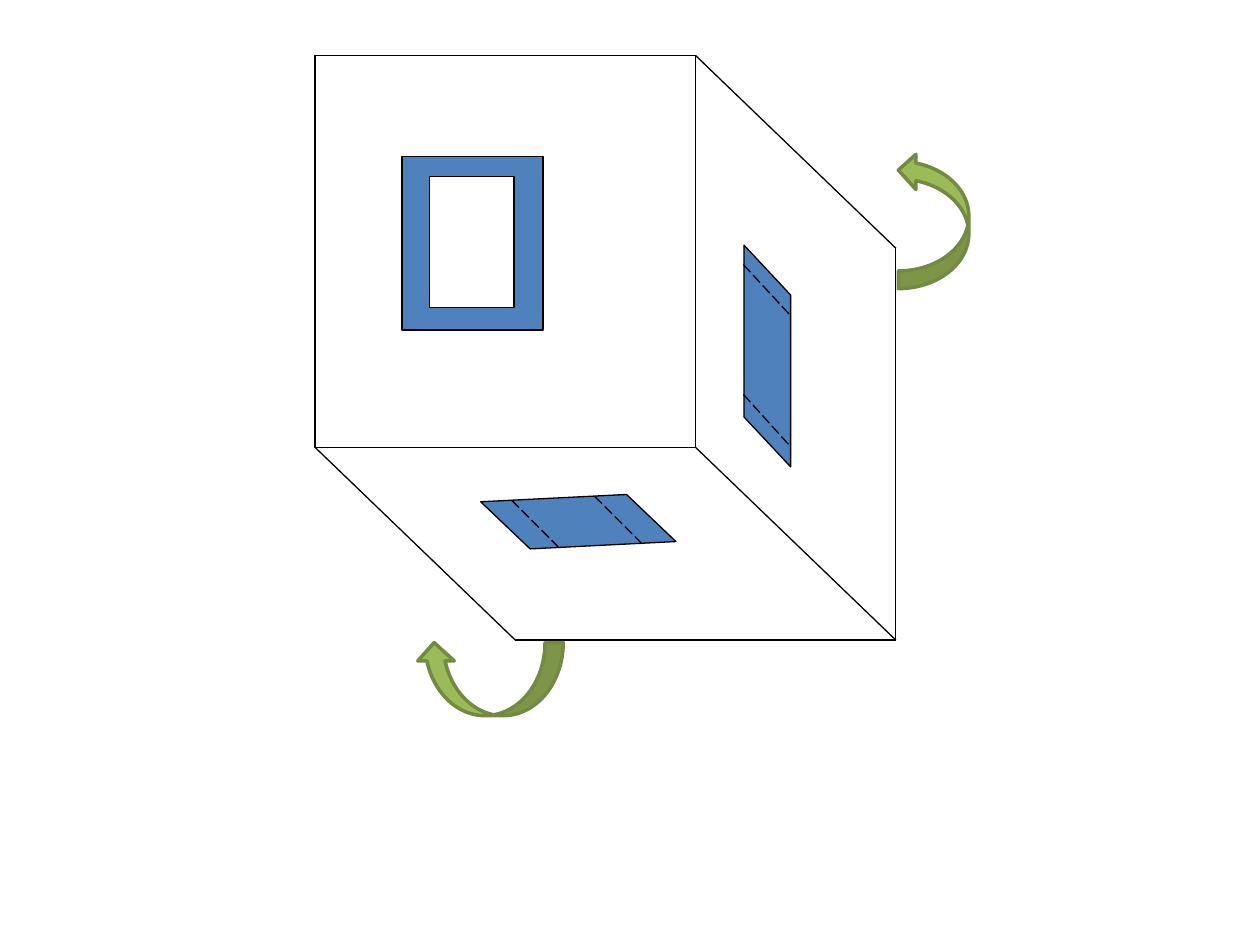
from pptx import Presentation, util as u
from pptx.dml.color import RGBColor
from pptx.enum import dml, shapes
from pptx.oxml.ns import qn
from lxml import etree

HUES = {"ink": "000000", "blue": "4F81BD", "white": "FFFFFF",
        "green": "9BBB59", "edge": "738A42"}
COLS, ROWS = 100, 75
KIND = shapes.MSO_SHAPE


class Board:
    """Holds the style and the slide; lengths are grid columns and rows."""

    def __init__(self, deck):
        self.slide = deck.slides.add_slide(deck.slide_layouts[6])
        self.col = deck.slide_width / COLS
        self.row = deck.slide_height / ROWS

    def size(self, x, y):
        return u.Emu(round(x * self.col)), u.Emu(round(y * self.row))

    def pen(self, line, hue="ink", width=0.75):
        line.color.rgb = RGBColor.from_string(HUES[hue])
        line.width = u.Pt(width)

    def shape(self, kind, x, y, w, h, fill=None, turn=0, adj=None):
        item = self.slide.shapes.add_shape(kind, *self.size(x, y), *self.size(w, h))
        item.shadow.inherit = False
        item.rotation = turn
        if adj is not None:
            item.adjustments[0] = adj
        if fill:
            item.fill.solid()
            item.fill.fore_color.rgb = RGBColor.from_string(HUES[fill])
        else:
            item.fill.background()
        self.pen(item.line)
        return item

    def line(self, start, end, dash=False):
        item = self.slide.shapes.add_connector(
            shapes.MSO_CONNECTOR.STRAIGHT, *self.size(*start), *self.size(*end))
        etree.SubElement(item._element.spPr, qn("a:effectLst"))
        self.pen(item.line)
        if dash:
            item.line.dash_style = dml.MSO_LINE.LONG_DASH

    def arrow(self, kind, x, y, w, h, turn):
        item = self.shape(kind, x, y, w, h, "green", turn)
        self.pen(item.line, "edge", 2)


def main():
    deck = Presentation()
    deck.slide_width, deck.slide_height = u.Inches(10), u.Inches(7.5)
    board = Board(deck)

    # Box: front face, then the floor and side that recede from it
    left, top, right, base = 25, 4.4, 55.2, 35.5
    deep, drop = 15.9, 15.3
    board.shape(KIND.RECTANGLE, left, top, right - left, base - top)
    near = [(left, base), (right, base), (right, top)]
    far = [(x + deep, y + drop) for x, y in near]
    for start, end in [*zip(near, far), *zip(far, far[1:])]:
        board.line(start, end)

    # Front view: frame with an opening
    board.shape(KIND.RECTANGLE, 31.9, 12.4, 11.2, 13.8, "blue")
    board.shape(KIND.RECTANGLE, 34.1, 14, 6.7, 10.4, "white")

    # Side and floor views, with hidden edges dashed
    board.shape(KIND.PARALLELOGRAM, 52.1, 26.4, 17.6, 3.7, "blue", 270, 1.07)
    board.shape(KIND.PARALLELOGRAM, 39.2, 37.2, 13.4, 8.4, "blue", 223.6, 0.95)
    for x, y, run, fall in [(59, 21, 3.7, 4), (59, 31.3, 3.7, 4.1),
                            (40.6, 39.7, 3.7, 3.7), (47.2, 39.4, 3.8, 3.8)]:
        board.line((x, y), (x + run, y + fall), dash=True)

    # Arrows that swing the floor and side open
    board.arrow(KIND.CURVED_DOWN_ARROW, 33, 51, 11.7, 5.8, 180)
    board.arrow(KIND.CURVED_UP_ARROW, 68.7, 14.7, 10.8, 5.6, 270)

    deck.save("out.pptx")


if __name__ == "__main__":
    main()
